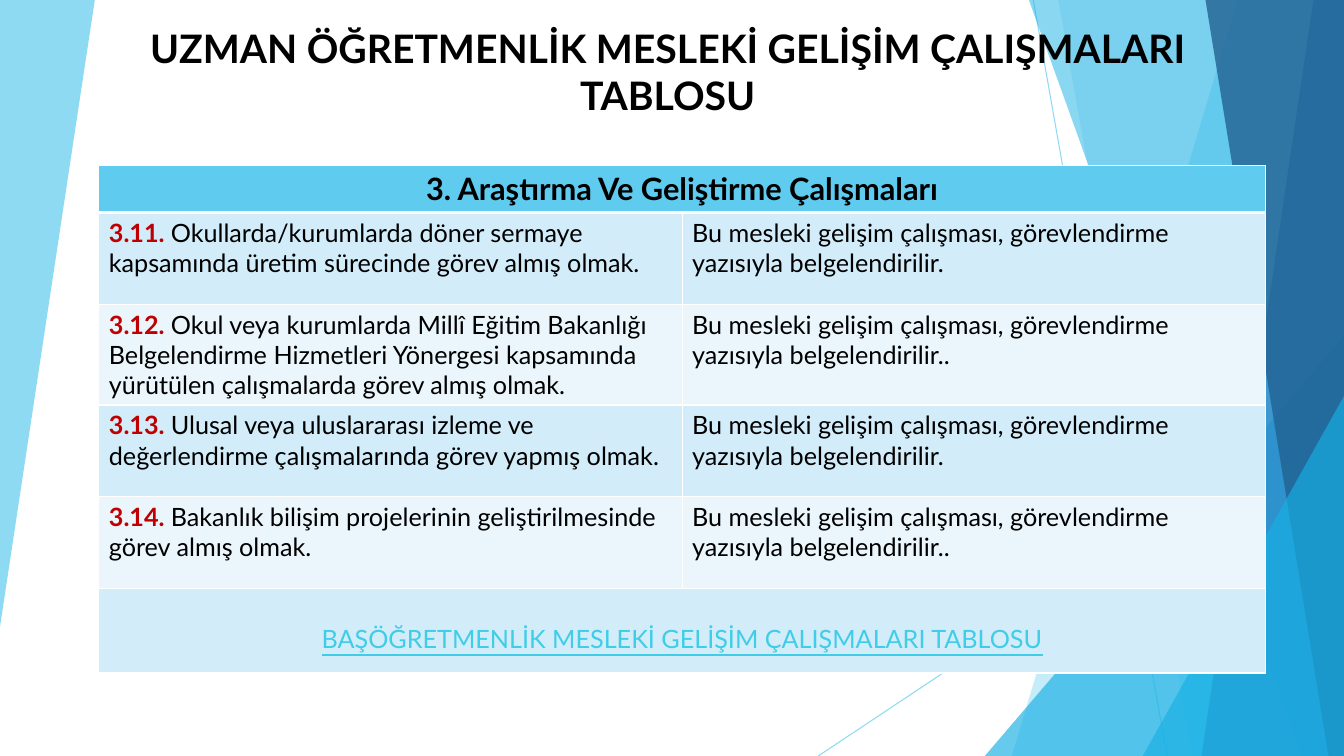
from dataclasses import dataclass

from lxml import etree
from pptx import Presentation
from pptx import util as u
from pptx.dml.color import RGBColor
from pptx.enum import shapes, text
from pptx.oxml import ns

WIDTH, HEIGHT = 33.87, 19.05  # centimetres, like every length below
FONT = "Lato"
SKY = RGBColor(0x5F, 0xCB, 0xEF)
CYAN = RGBColor(0x17, 0xB0, 0xE4)
BLUE = RGBColor(0x2E, 0x83, 0xC3)
NAVY = RGBColor(0x22, 0x62, 0x92)
BAND_DARK = RGBColor(0xD2, 0xEC, 0xF9)
BAND_LIGHT = RGBColor(0xEA, 0xF6, 0xFC)
LINK = RGBColor(0x3F, 0xCD, 0xE7)
RED = RGBColor(0xC0, 0x00, 0x00)
BLACK = RGBColor(0, 0, 0)
WHITE = RGBColor(0xFF, 0xFF, 0xFF)


@dataclass
class Facet:
    """Flat polygon given by its corners."""
    points: list[tuple[float, float]]
    color: RGBColor
    opacity: int


@dataclass
class Peak:
    """Right triangle filling the bottom right corner of the page."""
    left: float
    top: float
    color: RGBColor = CYAN
    opacity: int = 66


@dataclass
class Ray:
    """Thin straight line."""
    start: tuple[float, float]
    end: tuple[float, float]
    color: RGBColor = SKY
    opacity: int = 70


@dataclass
class Activity:
    number: str
    task: str
    proof: str


def right_band(top_x: float, bottom_x: float, color: RGBColor, opacity: int) -> Facet:
    corners = [(top_x, 0), (WIDTH, 0), (WIDTH, HEIGHT), (bottom_x, HEIGHT)]
    return Facet(corners, color, opacity)


PROOF = "Bu mesleki gelişim çalışması, görevlendirme yazısıyla belgelendirilir."
ACTIVITIES = [
    Activity("3.11.", "Okullarda/kurumlarda döner sermaye kapsamında üretim sürecinde "
             "görev almış olmak.", PROOF),
    Activity("3.12.", "Okul veya kurumlarda Millî Eğitim Bakanlığı Belgelendirme Hizmetleri "
             "Yönergesi kapsamında yürütülen çalışmalarda görev almış olmak.", PROOF + "."),
    Activity("3.13.", "Ulusal veya uluslararası izleme ve değerlendirme çalışmalarında "
             "görev yapmış olmak.", PROOF),
    Activity("3.14.", "Bakanlık bilişim projelerinin geliştirilmesinde görev almış olmak.",
             PROOF + "."),
]
BACKDROP = [
    Facet([(0, 0), (2.39, 0), (0, 15.8)], SKY, 70),
    Ray((26.04, 0), (29.41, HEIGHT)),
    Ray((WIDTH, 10.24), (20.62, HEIGHT)),
    right_band(31.19, 25.5, SKY, 36),
    right_band(26.67, 30.05, SKY, 20),
    Peak(24.82, 8.46),
    right_band(25.93, 32.79, CYAN, 50),
    right_band(33.1, 30.28, BLUE, 70),
    right_band(30.38, 33.48, NAVY, 80),
    Peak(28.8, 9.98),
]


def write(para, words: str, *, size: float = 18, color: RGBColor = BLACK, bold: bool = False,
          underline: bool = False, align=text.PP_ALIGN.LEFT) -> None:
    para.alignment = align
    span = para.add_run()
    span.text = words
    span.font.name = FONT
    span.font.size = u.Pt(size)
    span.font.bold = bold
    span.font.underline = underline
    span.font.color.rgb = color


def set_opacity(element, percent: int) -> None:
    color = next(element.iter(ns.qn("a:srgbClr")))
    etree.SubElement(color, ns.qn("a:alpha")).set("val", str(percent * 1000))


def draw_part(page, part: Facet | Peak | Ray) -> None:
    if isinstance(part, Ray):
        ends = [u.Cm(value) for value in (*part.start, *part.end)]
        line = page.shapes.add_connector(shapes.MSO_CONNECTOR.STRAIGHT, *ends)
        line.line.color.rgb = part.color
        line.line.width = u.Pt(0.75)
        properties = line.element.spPr
        set_opacity(properties, part.opacity)
        etree.SubElement(properties, ns.qn("a:effectLst"))
        return
    if isinstance(part, Peak):
        shape = page.shapes.add_shape(
            shapes.MSO_SHAPE.ISOSCELES_TRIANGLE, u.Cm(part.left), u.Cm(part.top),
            u.Cm(WIDTH - part.left), u.Cm(HEIGHT - part.top))
        shape.adjustments[0] = 1
    else:
        corners = [(u.Cm(x), u.Cm(y)) for x, y in part.points]
        builder = page.shapes.build_freeform(*corners[0])
        builder.add_line_segments(corners[1:], close=True)
        shape = builder.convert_to_shape()
    shape.shadow.inherit = False
    shape.fill.solid()
    shape.fill.fore_color.rgb = part.color
    shape.line.fill.background()
    set_opacity(shape.element.spPr, part.opacity)


def style_cell(cell, fill: RGBColor, *, top: float = 1, bottom: float = 1) -> None:
    properties = cell._tc.get_or_add_tcPr()
    for side, width in (("L", 1), ("R", 1), ("T", top), ("B", bottom)):
        border = etree.SubElement(properties, ns.qn(f"a:ln{side}"), w=str(u.Pt(width)))
        solid = etree.SubElement(border, ns.qn("a:solidFill"))
        etree.SubElement(solid, ns.qn("a:srgbClr"), val=str(WHITE))
    cell.fill.solid()
    cell.fill.fore_color.rgb = fill


def draw_title(page) -> None:
    box = page.shapes.add_textbox(u.Cm(1.47), u.Cm(1.32), u.Cm(30.71), u.Cm(1.78))
    frame = box.text_frame
    frame.word_wrap = True
    frame.vertical_anchor = text.MSO_ANCHOR.BOTTOM
    write(frame.paragraphs[0], "UZMAN ÖĞRETMENLİK MESLEKİ GELİŞİM ÇALIŞMALARI TABLOSU",
          size=28, bold=True, align=text.PP_ALIGN.CENTER)


def draw_table(page) -> None:
    heights = [1.09] + [2.31] * len(ACTIVITIES) + [2.13]
    last = len(heights) - 1
    table = page.shapes.add_table(len(heights), 2, u.Cm(2.49), u.Cm(4.17),
                                  u.Cm(29.4), u.Cm(sum(heights))).table
    for index, height in enumerate(heights):
        table.rows[index].height = u.Cm(height)
        band = BAND_DARK if index % 2 else BAND_LIGHT
        for cell in table.rows[index].cells:
            style_cell(cell, band if index else SKY,
                       top=3 if index == 1 else 1, bottom=1 if index else 3)

    # Header and footer span both columns
    for index in (0, last):
        table.cell(index, 0).merge(table.cell(index, 1))
    write(table.cell(0, 0).text_frame.paragraphs[0], "3. Araştırma Ve Geliştirme Çalışmaları",
          size=22, bold=True, align=text.PP_ALIGN.CENTER)
    footer = table.cell(last, 0)
    footer.margin_top = u.Cm(0.89)
    write(footer.text_frame.paragraphs[0], "BAŞÖĞRETMENLİK MESLEKİ GELİŞİM ÇALIŞMALARI TABLOSU",
          color=LINK, underline=True, align=text.PP_ALIGN.CENTER)

    # One row per activity
    for index, activity in enumerate(ACTIVITIES, start=1):
        task = table.cell(index, 0).text_frame.paragraphs[0]
        write(task, activity.number + " ", color=RED, bold=True)
        write(task, activity.task)
        write(table.cell(index, 1).text_frame.paragraphs[0], activity.proof)


def main() -> None:
    deck = Presentation()
    deck.slide_width, deck.slide_height = u.Cm(WIDTH), u.Cm(HEIGHT)
    page = deck.slides.add_slide(deck.slide_layouts[6])
    for part in BACKDROP:
        draw_part(page, part)
    draw_title(page)
    draw_table(page)
    deck.save("out.pptx")


if __name__ == "__main__":
    main()
